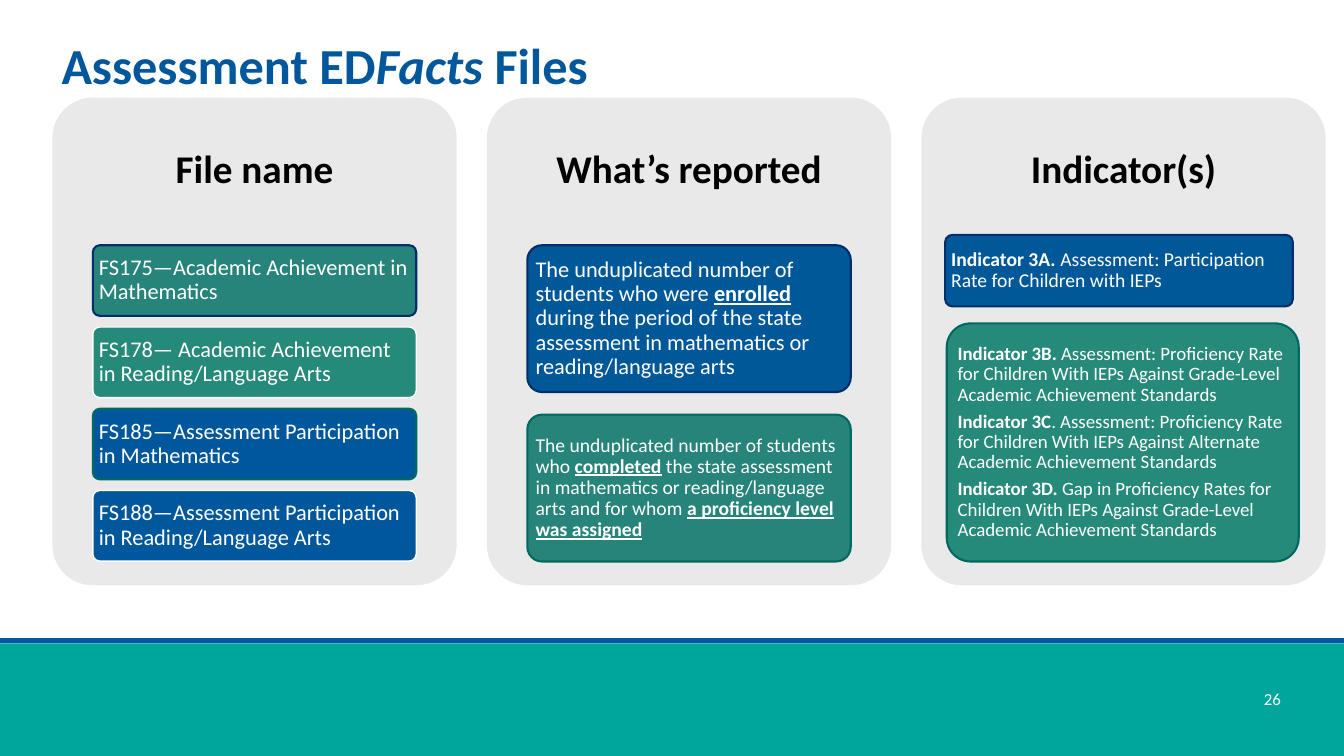
from dataclasses import dataclass

from pptx import Presentation
from pptx.dml.color import RGBColor
from pptx.enum.shapes import MSO_SHAPE
from pptx.enum.text import MSO_ANCHOR, MSO_AUTO_SIZE, PP_ALIGN
from pptx.util import Cm, Pt

RECTANGLE, ROUNDED = MSO_SHAPE.RECTANGLE, MSO_SHAPE.ROUNDED_RECTANGLE
TOP, MIDDLE = MSO_ANCHOR.TOP, MSO_ANCHOR.MIDDLE
LEFT, CENTER, RIGHT = PP_ALIGN.LEFT, PP_ALIGN.CENTER, PP_ALIGN.RIGHT
NO_AUTOFIT = MSO_AUTO_SIZE.NONE
TITLE_ONLY = 5


@dataclass(frozen=True)
class Theme:
    font: str = "Calibri"
    blue: str = "01579B"
    deep_blue: str = "005899"
    navy: str = "002F6C"
    green: str = "26847A"
    bright_green: str = "268A7A"
    dark_green: str = "006960"
    teal: str = "00A59B"
    panel: str = "E9E9E9"
    white: str = "FFFFFF"
    black: str = "000000"
    title_size: float = 36
    heading_size: float = 28
    file_size: float = 16
    detail_size: float = 14
    list_size: float = 13.5
    number_size: float = 12


THEME = Theme()


def rgb(color):
    return RGBColor.from_string(color)


def write(box, paragraphs, *, size, color, bold=False, align=LEFT, anchor=MIDDLE,
          insets=(0, 0), space_after=0.0):
    frame = box.text_frame
    frame.word_wrap = True
    frame.auto_size = NO_AUTOFIT
    frame.vertical_anchor = anchor
    frame.margin_left = frame.margin_right = Cm(insets[0])
    frame.margin_top = frame.margin_bottom = Cm(insets[1])
    for index, spans in enumerate(paragraphs):
        para = frame.add_paragraph() if index else frame.paragraphs[0]
        para.alignment = align
        para.line_spacing = 0.9
        para.space_before = Pt(0)
        para.space_after = Pt(size * space_after)
        for text, marks in spans:
            span = para.add_run()
            span.text = text
            span.font.name = THEME.font
            span.font.size = Pt(size)
            span.font.color.rgb = rgb(color)
            span.font.bold = bold or "b" in marks
            span.font.italic = "i" in marks
            span.font.underline = "u" in marks


class Page:
    def __init__(self, deck, theme):
        self.theme = theme
        self.slide = deck.slides.add_slide(deck.slide_layouts[TITLE_ONLY])

    def title(self, spans, left, top, width, height):
        box = self.slide.shapes.title
        box.left, box.top, box.width, box.height = map(Cm, (left, top, width, height))
        write(box, [spans], size=self.theme.title_size, color=self.theme.blue,
              bold=True, anchor=TOP)

    def shape(self, left, top, width, height, fill, kind=ROUNDED, line=None, weight=1.5):
        box = self.slide.shapes.add_shape(kind, *map(Cm, (left, top, width, height)))
        box.shadow.inherit = False
        if kind == ROUNDED:
            box.adjustments[0] = 0.1
        box.fill.solid()
        box.fill.fore_color.rgb = rgb(fill)
        if line:
            box.line.color.rgb = rgb(line)
            box.line.width = Pt(weight)
        else:
            box.line.fill.background()
        return box

    def label(self, text, left, top, width, height, **style):
        box = self.slide.shapes.add_textbox(*map(Cm, (left, top, width, height)))
        write(box, [[(text, "")]], **style)

    def card(self, paragraphs, left, top, width, height, fill, line, size, weight=1.5):
        box = self.shape(left, top, width, height, fill, line=line, weight=weight)
        write(box, paragraphs, size=size, color=self.theme.white,
              insets=(0.1, 0.08), space_after=0.35)

    def column(self, heading, left, top, width, height):
        self.shape(left, top, width, height, self.theme.panel)
        self.label(heading, left, top, width, 3.69, size=self.theme.heading_size,
                   color=self.theme.black, bold=True, align=CENTER,
                   insets=(0.3, 0.3), space_after=0.35)


def main():
    deck = Presentation()
    deck.slide_width, deck.slide_height = Cm(33.87), Cm(19.05)
    page = Page(deck, THEME)

    page.shape(0, 16.21, 33.87, 2.84, THEME.teal, kind=RECTANGLE)
    page.shape(0, 16.08, 33.87, 0.13, THEME.blue, kind=RECTANGLE)
    page.title([("Assessment ED", ""), ("Facts", "i"), (" Files", "")],
               1.55, 1.02, 30.71, 3.68)
    page.label("26", 31.09, 16.94, 1.19, 1.42, size=THEME.number_size,
               color=THEME.white, align=RIGHT)

    headings = ("File name", "What’s reported", "Indicator(s)")
    column_lefts = [1.32 + 10.95 * index for index in range(len(headings))]
    for heading, left in zip(headings, column_lefts):
        page.column(heading, left, 2.46, 10.19, 12.29)
    file_left, reported_left, _ = (left + 1.02 for left in column_lefts)
    card_top, card_width = 6.18, 8.15

    files = [
        ("FS175—Academic Achievement in Mathematics", THEME.green, THEME.navy, 1.5),
        ("FS178— Academic Achievement in Reading/Language Arts",
         THEME.bright_green, THEME.white, 1),
        ("FS185—Assessment Participation in Mathematics",
         THEME.blue, THEME.dark_green, 1.5),
        ("FS188—Assessment Participation in Reading/Language Arts",
         THEME.blue, THEME.white, 1),
    ]
    for row, (name, fill, line, weight) in enumerate(files):
        page.card([[(name, "")]], file_left, card_top + 2.06 * row, card_width, 1.78,
                  fill, line, THEME.file_size, weight)

    enrolled = [
        ("The unduplicated number of students who were ", ""),
        ("enrolled", "bu"),
        (" during the period of the state assessment in mathematics or "
         "reading/language arts", ""),
    ]
    completed = [
        ("The unduplicated number of students who ", ""),
        ("completed", "bu"),
        (" the state assessment in mathematics or reading/language arts and for whom ", ""),
        ("a proficiency level was assigned", "bu"),
    ]
    reported = [
        (enrolled, THEME.deep_blue, THEME.navy, THEME.file_size),
        (completed, THEME.green, THEME.dark_green, THEME.detail_size),
    ]
    for row, (spans, fill, line, size) in enumerate(reported):
        page.card([spans], reported_left, card_top + 4.27 * row, card_width, 3.7,
                  fill, line, size)

    participation = [[
        ("Indicator 3A.", "b"),
        (" Assessment: Participation Rate for Children with IEPs", ""),
    ]]
    proficiency = [
        [("Indicator 3B.", "b"),
         (" Assessment: Proficiency Rate for Children With IEPs Against Grade-Level "
          "Academic Achievement Standards", "")],
        [("Indicator 3C", "b"),
         (". Assessment: Proficiency Rate for Children With IEPs Against Alternate "
          "Academic Achievement Standards", "")],
        [("Indicator 3D. ", "b"),
         ("Gap in Proficiency Rates for Children With IEPs Against Grade-Level "
          "Academic Achievement Standards", "")],
    ]
    page.card(participation, 23.82, 5.92, 8.76, 1.8,
              THEME.deep_blue, THEME.navy, THEME.detail_size)
    page.card(proficiency, 23.86, 8.15, 8.87, 6,
              THEME.bright_green, THEME.dark_green, THEME.list_size)

    deck.save("out.pptx")


if __name__ == "__main__":
    main()
